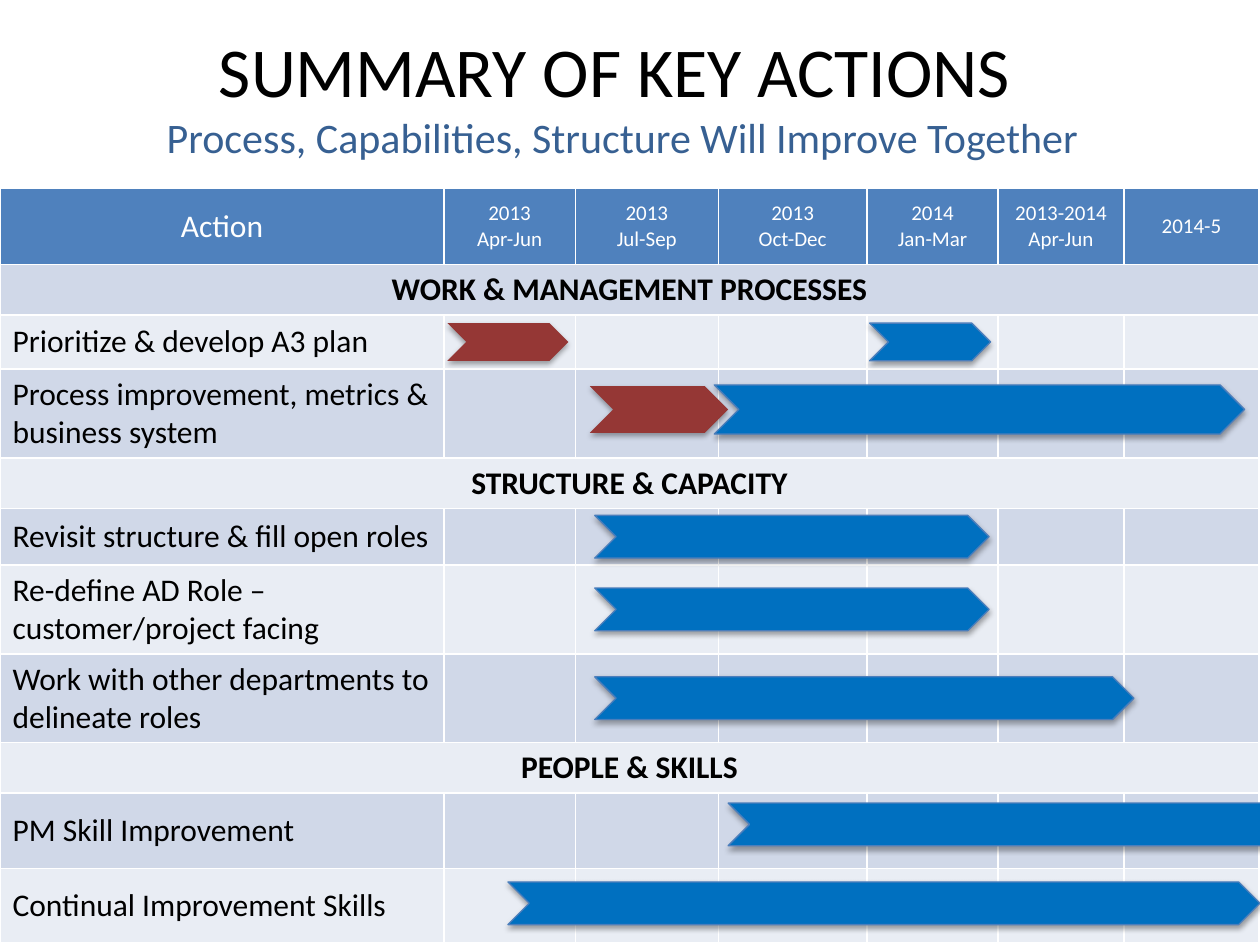
from dataclasses import dataclass

from lxml.etree import SubElement
from pptx import Presentation
from pptx.dml.color import RGBColor
from pptx.enum.shapes import MSO_SHAPE
from pptx.enum.text import MSO_ANCHOR, PP_ALIGN
from pptx.oxml.ns import qn
from pptx.util import Cm, Pt


@dataclass(frozen=True)
class Theme:
    font: str = "Calibri"
    black: str = "000000"
    white: str = "FFFFFF"
    blue: str = "376092"
    head: str = "4F81BD"
    bands: tuple = ("D0D8E8", "E9EDF4")
    bar: str = "0070C0"
    edge: str = "4B7EBC"
    done: str = "953735"
    title: int = 40
    sub: int = 24
    body: int = 18
    date: int = 12


THEME = Theme()

TITLE = "SUMMARY OF KEY ACTIONS "
SUBTITLE = "Process, Capabilities, Structure Will Improve Together"
HEADS = ["Action", "2013\nApr-Jun", "2013\nJul-Sep", "2013\nOct-Dec",
         "2014\nJan-Mar", "2013-2014\nApr-Jun", "2014-5"]
COLS = [8.95, 2.65, 2.88, 3, 2.64, 2.54, 2.72]
TOP, HEAD_HIGH, GROUP_HIGH = 3.8, 1.53, 1.02

# Each group: name, then its actions as (text, row height, bars).
# Each bar: colour, left, width, height, lift above the middle of the row.
GROUPS = [
    ("WORK & MANAGEMENT PROCESSES", [
        ("Prioritize & develop A3 plan", 1.09,
         [(THEME.done, 9.02, 2.44, 0.76, 0), (THEME.bar, 17.53, 2.44, 0.76, 0)]),
        ("Process improvement, metrics & business system", 1.79,
         [(THEME.bar, 14.4, 10.69, 0.99, 0.08), (THEME.done, 11.89, 2.79, 0.94, 0.08)]),
    ]),
    ("STRUCTURE & CAPACITY", [
        ("Revisit structure & fill open roles", 1.14,
         [(THEME.bar, 11.99, 7.95, 0.86, 0)]),
        ("Re-define AD Role – customer/project facing", 1.79,
         [(THEME.bar, 11.99, 7.95, 0.86, 0)]),
        ("Work with other departments to delineate roles", 1.79,
         [(THEME.bar, 11.99, 10.87, 0.86, 0)]),
    ]),
    ("PEOPLE & SKILLS", [
        ("PM Skill Improvement", 1.52, [(THEME.bar, 14.68, 15.49, 0.86, 0.13)]),
        ("Continual Improvement Skills", 1.5, [(THEME.bar, 10.24, 15.16, 0.86, 0.05)]),
    ]),
]


def style(run, size, color, bold=False):
    run.font.name = THEME.font
    run.font.size = Pt(size)
    run.font.bold = bold
    run.font.color.rgb = RGBColor.from_string(color)


def paint(item, color):
    item.fill.solid()
    item.fill.fore_color.rgb = RGBColor.from_string(color)


def write(cell, text, size, color, bold=False, align=PP_ALIGN.CENTER):
    cell.text_frame.text = text
    cell.vertical_anchor = MSO_ANCHOR.MIDDLE
    for par in cell.text_frame.paragraphs:
        par.alignment = align
        for run in par.runs:
            style(run, size, color, bold)


def add_title(slide):
    box = slide.shapes.add_textbox(Cm(0), Cm(0.38), Cm(25.1), Cm(3.07))
    frame = box.text_frame
    frame.word_wrap = True
    frame.vertical_anchor = MSO_ANCHOR.MIDDLE
    frame.text = f"{TITLE}\v{SUBTITLE}"
    par = frame.paragraphs[0]
    par.alignment = PP_ALIGN.CENTER
    first, second = par.runs
    style(first, THEME.title, THEME.black)
    style(second, THEME.sub, THEME.blue)


def add_shadow(shape):
    """Give the shape a soft shadow straight below it."""
    shape.shadow.inherit = False
    effects = shape._element.spPr.find(qn("a:effectLst"))
    outer = SubElement(effects, qn("a:outerShdw"), blurRad="40000",
                       dist="23000", dir="5400000", rotWithShape="0")
    tone = SubElement(outer, qn("a:srgbClr"), val=THEME.black)
    SubElement(tone, qn("a:alpha"), val="35000")


def add_bar(slide, middle, color, left, width, height, lift):
    bar = slide.shapes.add_shape(MSO_SHAPE.CHEVRON, Cm(left),
                                 Cm(middle - lift - height / 2), Cm(width), Cm(height))
    paint(bar, color)
    if color == THEME.done:
        bar.line.fill.background()
    else:
        bar.line.color.rgb = RGBColor.from_string(THEME.edge)
        bar.line.width = Pt(0.75)
    add_shadow(bar)


def add_plan(slide):
    rows = []
    for name, actions in GROUPS:
        rows += [(name, GROUP_HIGH, None), *actions]
    highs = [HEAD_HIGH] + [high for _, high, _ in rows]
    table = slide.shapes.add_table(len(highs), len(COLS), Cm(0), Cm(TOP),
                                   Cm(sum(COLS)), Cm(sum(highs))).table
    for col, width in zip(table.columns, COLS):
        col.width = Cm(width)
    for row, high in zip(table.rows, highs):
        row.height = Cm(high)

    for i, text in enumerate(HEADS):
        cell = table.cell(0, i)
        paint(cell, THEME.head)
        write(cell, text, THEME.date if i else THEME.body, THEME.white)

    y = TOP + HEAD_HIGH
    for i, (text, high, bars) in enumerate(rows, 1):
        for cell in table.rows[i].cells:
            paint(cell, THEME.bands[(i - 1) % 2])
        first = table.cell(i, 0)
        if bars is None:
            first.merge(table.cell(i, len(COLS) - 1))
            write(first, text, THEME.body, THEME.black, bold=True)
        else:
            write(first, text, THEME.body, THEME.black, align=PP_ALIGN.LEFT)
            for bar in bars:
                add_bar(slide, y + high / 2, *bar)
        y += high


def main():
    deck = Presentation()
    deck.slide_width, deck.slide_height = Cm(25.4), Cm(19.05)
    slide = deck.slides.add_slide(deck.slide_layouts[6])
    add_title(slide)
    add_plan(slide)
    deck.save("out.pptx")


if __name__ == "__main__":
    main()
